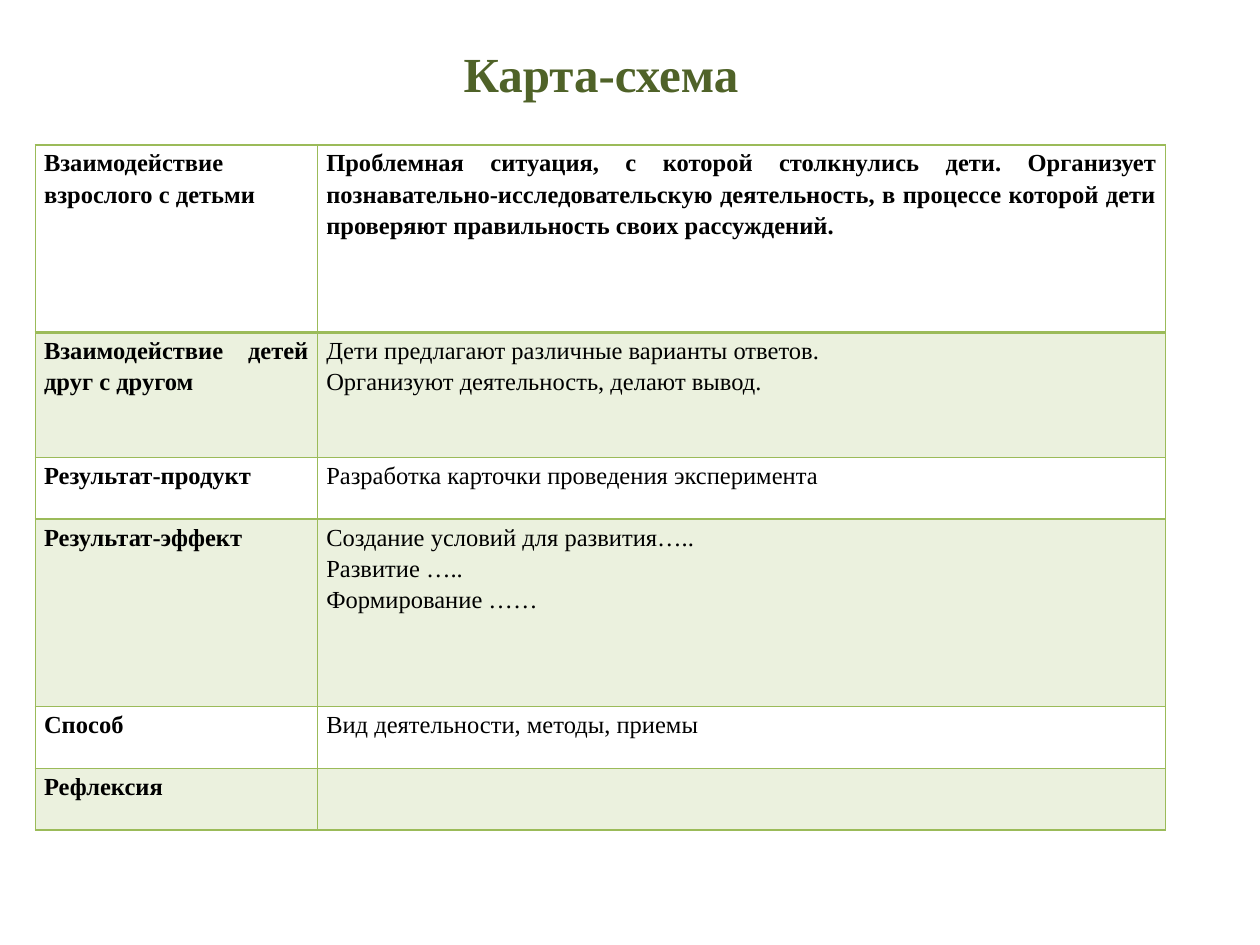
"""Build the slide with the scheme table of adult and child interaction."""
from lxml.etree import SubElement
from pptx import Presentation
from pptx.dml.color import RGBColor
from pptx.enum.text import MSO_ANCHOR, PP_ALIGN
from pptx.oxml.ns import qn
from pptx.util import Inches, Pt

COLORS = {"title": "4F6228", "text": "000000", "border": "9BBB59", "band": "EBF1DE"}
FONT = "Times New Roman"
COLUMN_WIDTHS = [2.24, 6.73]
ROWS = [
    (1.49, "Взаимодействие взрослого с детьми",
     "Проблемная ситуация, с которой столкнулись дети. Организует "
     "познавательно-исследовательскую деятельность, в процессе которой дети "
     "проверяют правильность своих рассуждений."),
    (0.99, "Взаимодействие детей друг с другом",
     "Дети предлагают различные варианты ответов.\n"
     "Организуют деятельность, делают вывод."),
    (0.49, "Результат-продукт", "Разработка карточки проведения эксперимента"),
    (1.49, "Результат-эффект",
     "Создание условий для развития…..\nРазвитие …..\nФормирование ……"),
    (0.49, "Способ", "Вид деятельности, методы, приемы"),
    (0.49, "Рефлексия", ""),
]


def style_paragraph(paragraph, size, color, bold, alignment, spacing):
    paragraph.alignment = alignment
    paragraph.line_spacing = spacing
    font = paragraph.font
    font.name, font.size, font.bold = FONT, Pt(size), bold
    font.color.rgb = RGBColor.from_string(COLORS[color])


def add_border(cell, side, width):
    line = SubElement(cell._tc.get_or_add_tcPr(), qn(f"a:ln{side}"), w=str(Pt(width)))
    fill = SubElement(line, qn("a:solidFill"))
    SubElement(fill, qn("a:srgbClr"), val=COLORS["border"])


presentation = Presentation()
presentation.slide_width = Inches(10)
presentation.slide_height = Inches(7.5)
slide = presentation.slides.add_slide(presentation.slide_layouts[6])

row_heights = [row[0] for row in ROWS]
table = slide.shapes.add_table(
    len(ROWS), len(COLUMN_WIDTHS), Inches(0.28), Inches(1.15),
    Inches(sum(COLUMN_WIDTHS)), Inches(sum(row_heights))).table
table.first_row = False
table.horz_banding = False
for column, width in zip(table.columns, COLUMN_WIDTHS):
    column.width = Inches(width)

for row_index, (height, *texts) in enumerate(ROWS):
    table.rows[row_index].height = Inches(height)
    for column_index, text in enumerate(texts):
        cell = table.cell(row_index, column_index)
        cell.margin_left = cell.margin_right = Inches(0.07)
        cell.margin_top, cell.margin_bottom = Inches(0.01), 0
        cell.text = text
        bold = row_index == 0 or column_index == 0
        for paragraph in cell.text_frame.paragraphs:
            style_paragraph(paragraph, 14, "text", bold, PP_ALIGN.JUSTIFY, 1.15)
        add_border(cell, "L", 1)
        add_border(cell, "R", 1)
        add_border(cell, "T", 2 if row_index == 1 else 1)
        add_border(cell, "B", 2 if row_index == 0 else 1)
        if row_index % 2:
            cell.fill.solid()
            cell.fill.fore_color.rgb = RGBColor.from_string(COLORS["band"])
        else:
            cell.fill.background()

title = slide.shapes.add_textbox(Inches(0.44), Inches(0.29), Inches(8.66), Inches(0.58))
title.text_frame.word_wrap = True
title.text_frame.vertical_anchor = MSO_ANCHOR.BOTTOM
title.text_frame.text = "Карта-схема"
style_paragraph(title.text_frame.paragraphs[0], 28, "title", True, PP_ALIGN.CENTER, 0.9)

presentation.save("out.pptx")
